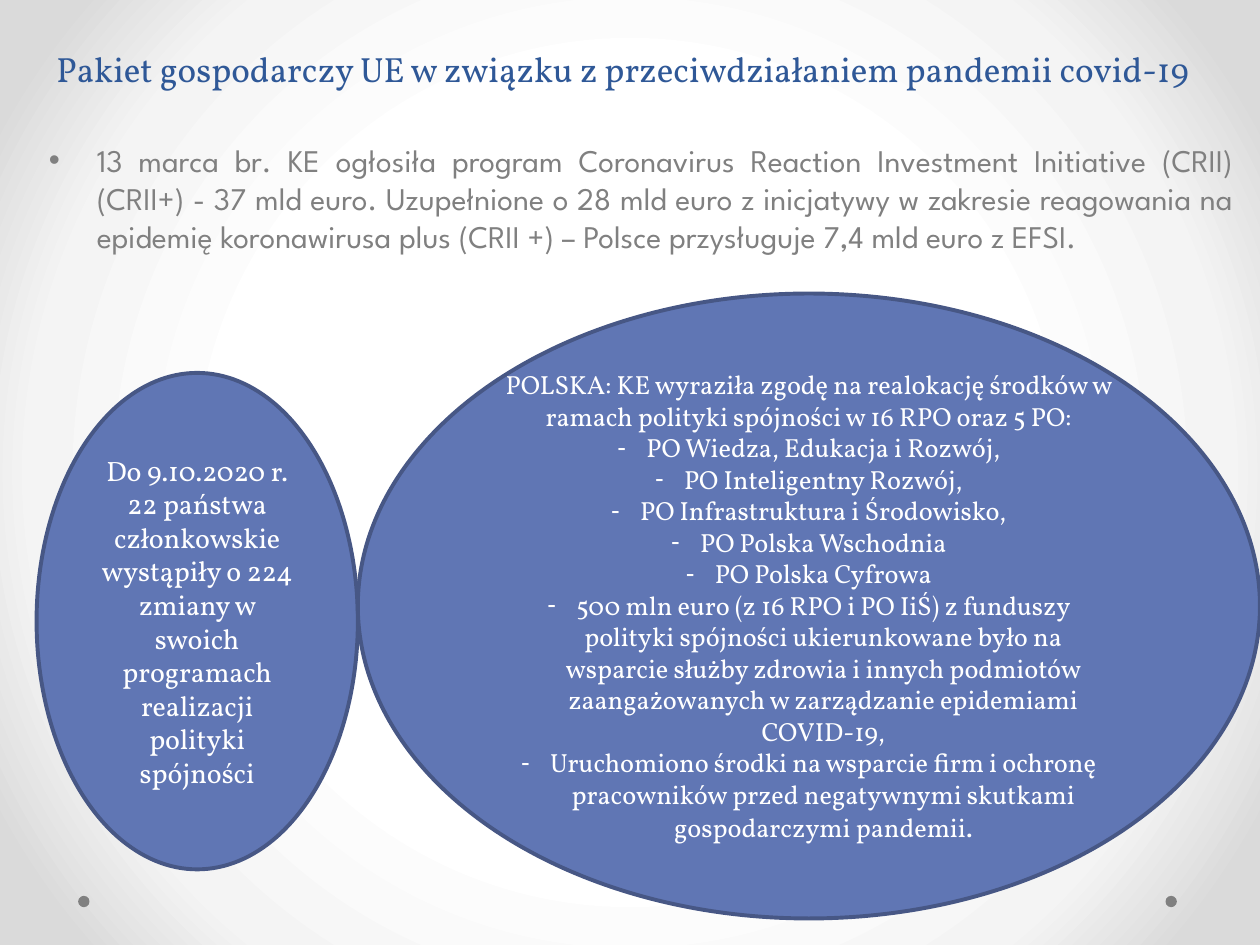
import pptx
import pptx.util
import pptx.dml.color
import pptx.enum.shapes
import pptx.enum.text
import pptx.oxml
import pptx.oxml.ns

Inches, Pt = pptx.util.Inches, pptx.util.Pt
ALIGN = pptx.enum.text.PP_ALIGN
ANCHOR = pptx.enum.text.MSO_ANCHOR
OVAL = pptx.enum.shapes.MSO_SHAPE.OVAL
NS = pptx.oxml.ns.nsdecls("a")


def hue(code):
    return pptx.dml.color.RGBColor.from_string(code)


def write(frame, lines, size, color, font="Vollkorn", form=None):
    """Fill a frame with (bullet, indent, runs) lines; a run is (text, size or None)."""
    frame.word_wrap = True
    for num, (mark, indent, runs) in enumerate(lines):
        para = frame.add_paragraph() if num else frame.paragraphs[0]
        for key, value in {"alignment": ALIGN.CENTER, **(form or {})}.items():
            setattr(para, key, value)
        if mark:
            props = para._p.get_or_add_pPr()
            props.set("marL", str(Inches(indent)))
            props.set("indent", str(-Inches(indent)))
            props.append(pptx.oxml.parse_xml(f'<a:buFont {NS} typeface="Arial"/>'))
            props.append(pptx.oxml.parse_xml(f'<a:buChar {NS} char="{mark}"/>'))
        for text, own in runs:
            run = para.add_run()
            run.text = text
            run.font.color.rgb = hue(color)
            for key, value in {"name": font, "size": Pt(own or size)}.items():
                setattr(run.font, key, value)


deck = pptx.Presentation()
deck.slide_width, deck.slide_height = Inches(10), Inches(7.5)
slide = deck.slides.add_slide(deck.slide_layouts[6])
shapes = slide.shapes

# Backdrop: light centre, grey corners
back = slide.background.fill
back.gradient()
grad = back._fill._gradFill
for part in list(grad):
    grad.remove(part)
stops = "".join(
    f'<a:gs pos="{spot * 1000}"><a:srgbClr val="{code}"/></a:gs>'
    for spot, code in [(50, "FFFFFF"), (76, "F4F4F4"), (92, "DADADA")]
)
grad.append(pptx.oxml.parse_xml(f"<a:gsLst {NS}>{stops}</a:gsLst>"))
grad.append(pptx.oxml.parse_xml(
    f'<a:path {NS} path="circle">'
    '<a:fillToRect l="50000" t="50000" r="50000" b="50000"/></a:path>'))

# Footer dots
for left in (9.25, 0.62):
    dot = shapes.add_shape(OVAL, Inches(left), Inches(7.11), Inches(0.09), Inches(0.09))
    dot.shadow.inherit = False
    dot.fill.solid()
    dot.fill.fore_color.rgb = hue("808080")
    dot.line.fill.background()

# Title
title = shapes.add_textbox(Inches(0), Inches(0.21), Inches(9.89), Inches(0.55)).text_frame
title.vertical_anchor = ANCHOR.BOTTOM
write(title, [(None, 0, [(
    "Pakiet gospodarczy UE w związku z przeciwdziałaniem pandemii covid-19", None)])],
    20, "2F5897", form={"line_spacing": Pt(58)})

# Body
body = shapes.add_textbox(Inches(0.29), Inches(1.07), Inches(9.6), Inches(6.22)).text_frame
write(body, [("•", 0.38, [(
    "13 marca br. KE ogłosiła program Coronavirus Reaction Investment Initiative (CRII) "
    "(CRII+) - 37 mld euro. Uzupełnione o 28 mld euro z inicjatywy w zakresie reagowania "
    "na epidemię koronawirusa plus (CRII +) – Polsce przysługuje 7,4 mld euro z EFSI.",
    None)])], 18, "808080", "League Spartan",
    {"alignment": ALIGN.JUSTIFY, "space_before": Pt(3.6)})

# Ovals
states = [(None, 0, [(
    "Do 9.10.2020 r. 22 państwa członkowskie wystąpiły o 224 zmiany w swoich "
    "programach realizacji polityki spójności", None)])]
points = [
    [("PO Wiedza, Edukacja i Rozwój,", None)],
    [("PO Inteligentny Rozwój,", None)],
    [("PO Infrastruktura i Środowisko,", None)],
    [("PO Polska Wschodnia", None)],
    [("PO Polska Cyfrowa", None)],
    [("500 mln euro (z 16 RPO i PO IiŚ) z funduszy polityki spójności ukierunkowane było "
      "na wsparcie służby zdrowia i innych podmiotów zaangażowanych w zarządzanie "
      "epidemiami COVID-19,", None)],
    [("Uruchomiono środki na wsparcie firm i ochronę pracowników przed negatywnymi "
      "skutkami gospodarczymi pandemii", None), (".", 16)],
]
poland = [(None, 0, [(
    "POLSKA: KE wyraziła zgodę na realokację środków w ramach polityki spójności "
    "w 16 RPO oraz 5 PO:", None)])]
poland += [("-", 0.23, runs) for runs in points]

for box, lines, size in [
    ((0.29, 2.96, 2.55, 3.94), states, 16),
    ((2.84, 2.33, 7.16, 4.96), poland, 15),
]:
    oval = shapes.add_shape(OVAL, *map(Inches, box))
    oval.shadow.inherit = False
    oval.fill.solid()
    oval.fill.fore_color.rgb = hue("6076B4")
    oval.line.color.rgb = hue("475785")
    oval.line.width = Pt(2.25)
    oval.text_frame.vertical_anchor = ANCHOR.MIDDLE
    write(oval.text_frame, lines, size, "FFFFFF")

deck.save("out.pptx")
